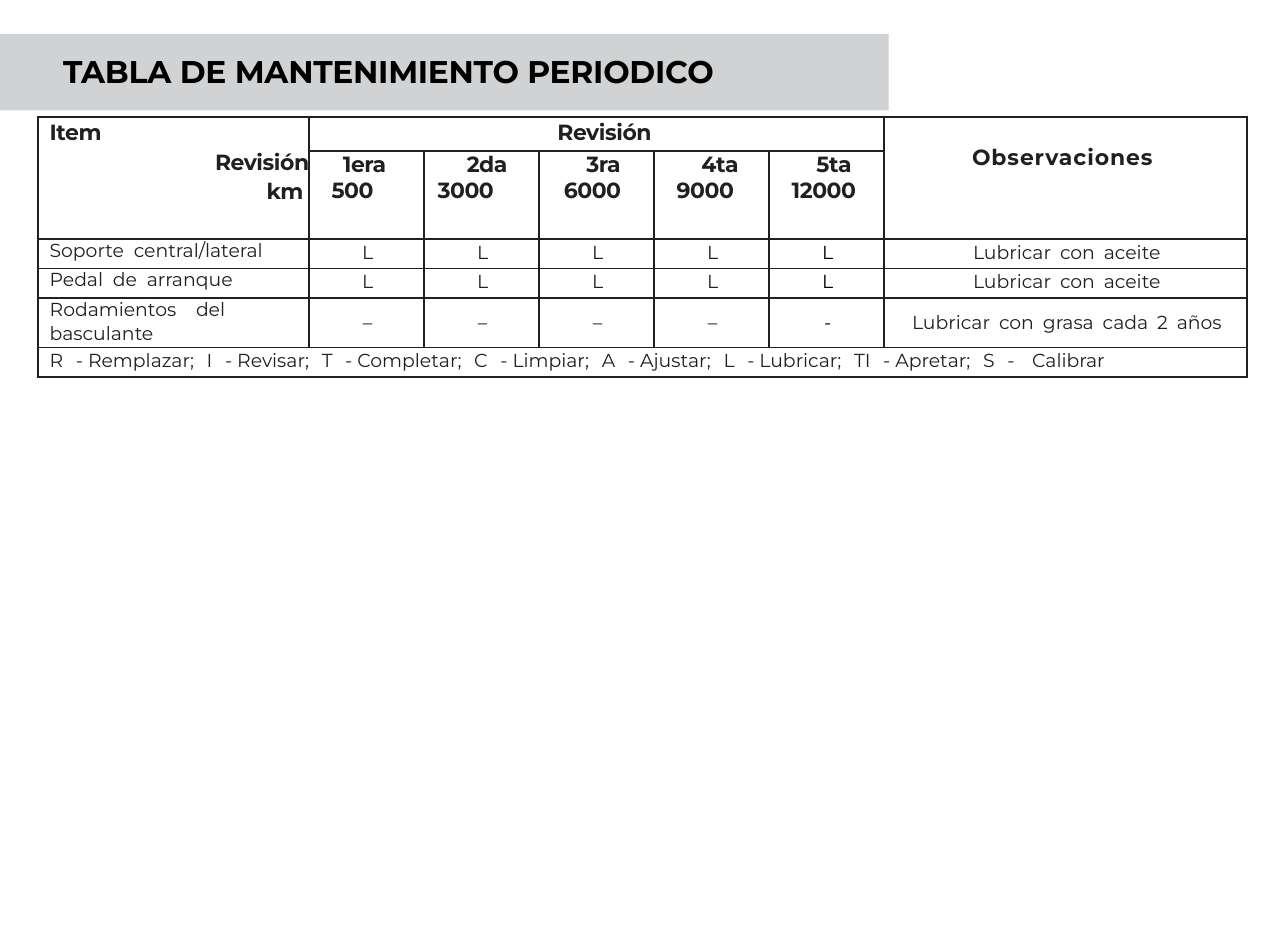
from lxml.etree import SubElement
from pptx import Presentation
from pptx.dml.color import RGBColor
from pptx.enum.shapes import MSO_SHAPE as Shape
from pptx.enum.text import MSO_ANCHOR as Anchor, MSO_AUTO_SIZE as AutoSize, PP_ALIGN as Align
from pptx.oxml.ns import qn
from pptx.util import Inches, Pt

COLORS = {"ink": "221F1F", "black": "000000", "band": "D1D2D3"}
COLUMNS = [1.2] + [0.51] * 5 + [1.61]
ROWS = [0.15, 0.38, 0.13, 0.13, 0.22, 0.13]
VERTICAL_RULES = [0.75, 0.75, 0.5, 0.5, 0.5, 0.75, 0.75, 0.75]
HORIZONTAL_RULES = [0.75, 0.75, 0.75, 0.5, 0.5, 0.5, 0.5]
REVISIONS = [
    ("1era", 0.15, "500", 0.1),
    ("2da", 0.19, "3000", 0.06),
    ("3ra", 0.21, "6000", 0.11),
    ("4ta", 0.21, "9000", 0.1),
    ("5ta", 0.21, "12000", 0.1),
]
TASKS = [
    (["Soporte central/lateral"], "LLLLL", "Lubricar con aceite", 0.01),
    (["Pedal de arranque"], "LLLLL", "Lubricar con aceite", 0.01),
    (["Rodamientos  del", "basculante"], "––––-", "Lubricar con grasa cada 2 años", 0.06),
]
LEGEND = ("R - Remplazar; I - Revisar; T - Completar; C - Limpiar; A - Ajustar; "
          "L - Lubricar; TI - Apretar; S -  Calibrar")


def write(frame, text, size=6, bold=False, color="ink", align=Align.LEFT,
          indent=0, before=0, line=None, tracking=0, gap=0, first=True):
    paragraph = frame.paragraphs[0] if first else frame.add_paragraph()
    paragraph.alignment = align
    paragraph.space_before = Pt(before)
    paragraph.line_spacing = Pt(line) if line else 1.0
    properties = paragraph._p.get_or_add_pPr()
    properties.set("marL", str(Inches(indent)))
    properties.set("indent", "0")
    pieces = [(text, tracking)]
    if gap:
        words = text.split(" ")
        pieces = [(words[0], tracking)]
        for previous, word in zip(words, words[1:]):
            pieces += [(" ", 0 if previous == "-" else gap), (word, tracking)]
    for piece, spacing in pieces:
        if not piece:
            continue
        run = paragraph.add_run()
        run.text = piece
        run.font.name = "Montserrat"
        run.font.size = Pt(size)
        run.font.bold = bold
        run.font.color.rgb = RGBColor.from_string(COLORS[color])
        run._r.get_or_add_rPr().set("spc", str(round(spacing * 100)))


class MaintenanceSlide:
    def __init__(self, deck):
        self.slide = deck.slides.add_slide(deck.slide_layouts[5])

    def title(self, text, left, top, width, height):
        heading = self.slide.shapes.title
        heading.left, heading.top = Inches(left), Inches(top)
        heading.width, heading.height = Inches(width), Inches(height)
        frame = heading.text_frame
        frame.margin_left = frame.margin_right = frame.margin_bottom = 0
        frame.margin_top = Inches(0.01)
        frame.word_wrap = True
        frame.auto_size = AutoSize.NONE
        frame.vertical_anchor = Anchor.TOP
        write(frame, text, size=10, bold=True, color="black", indent=0.01, tracking=-0.05)

    def band(self, left, top, width, height):
        strip = self.slide.shapes.add_shape(
            Shape.RECTANGLE, Inches(left), Inches(top), Inches(width), Inches(height))
        strip.shadow.inherit = False
        strip.fill.solid()
        strip.fill.fore_color.rgb = RGBColor.from_string(COLORS["band"])
        strip.line.fill.background()
        self.slide.shapes.title.element.addprevious(strip.element)

    def table(self, left, top):
        grid = self.slide.shapes.add_table(
            len(ROWS), len(COLUMNS), Inches(left), Inches(top),
            Inches(sum(COLUMNS)), Inches(sum(ROWS))).table
        grid.first_row = grid.horz_banding = False
        for column, width in zip(grid.columns, COLUMNS):
            column.width = Inches(width)
        for row, height in zip(grid.rows, ROWS):
            row.height = Inches(height)
        for start, end in [((0, 0), (1, 0)), ((0, 1), (0, 5)),
                           ((0, 6), (1, 6)), ((5, 0), (5, 6))]:
            grid.cell(*start).merge(grid.cell(*end))
        for r in range(len(ROWS)):
            for c in range(len(COLUMNS)):
                cell = grid.cell(r, c)
                cell.margin_left = cell.margin_right = cell.margin_top = cell.margin_bottom = 0
                if not cell.is_spanned:
                    self.borders(cell, r, c)
                cell.fill.background()
        return grid

    def borders(self, cell, r, c):
        widths = {
            "L": VERTICAL_RULES[c],
            "R": VERTICAL_RULES[c + cell.span_width],
            "T": HORIZONTAL_RULES[r],
            "B": HORIZONTAL_RULES[r + cell.span_height],
        }
        for side, width in widths.items():
            line = SubElement(cell._tc.get_or_add_tcPr(), qn(f"a:ln{side}"), w=str(Pt(width)))
            SubElement(SubElement(line, qn("a:solidFill")), qn("a:srgbClr"), val=COLORS["ink"])

    def text(self, cell, text, top=0, **style):
        cell.margin_top = Inches(top)
        write(cell.text_frame, text, **style)


def main():
    deck = Presentation()
    deck.slide_width, deck.slide_height = Inches(5.71), Inches(4.14)
    page = MaintenanceSlide(deck)
    page.title("TABLA DE MANTENIMIENTO PERIODICO", 0.27, 0.22, 3.54, 0.18)
    page.band(0, 0.15, 3.94, 0.34)
    schedule = page.table(0.17, 0.52)

    header = {"size": 7, "bold": True, "tracking": -0.1}
    corner = schedule.cell(0, 0)
    page.text(corner, "Item", top=0.01, indent=0.05, **header)
    for label in ("Revisión", "km "):
        write(corner.text_frame, label, align=Align.RIGHT, before=0.9, first=False, **header)
    page.text(schedule.cell(0, 1), "Revisión", top=0.01, indent=0.07, align=Align.CENTER, **header)
    page.text(schedule.cell(0, 6), "Observaciones", top=0.12, indent=0.39,
              **{**header, "tracking": 0.3})
    for c, (ordinal, ordinal_indent, km, km_indent) in enumerate(REVISIONS, 1):
        cell = schedule.cell(1, c)
        page.text(cell, ordinal, indent=ordinal_indent, **header)
        write(cell.text_frame, km, indent=km_indent, first=False, **header)

    for r, (item, marks, remark, top) in enumerate(TASKS, 2):
        cell = schedule.cell(r, 0)
        page.text(cell, item[0], indent=0.05, gap=1.6)
        for extra in item[1:]:
            write(cell.text_frame, extra, indent=0.05, before=0.9, line=6.9, first=False)
        for c, mark in enumerate(marks, 1):
            page.text(schedule.cell(r, c), mark, top=top, indent=0.01, align=Align.CENTER,
                      color="black" if c == len(marks) else "ink")
        page.text(schedule.cell(r, 6), remark, top=top, indent=0.01, align=Align.CENTER, gap=1.3)
    page.text(schedule.cell(5, 0), LEGEND, top=0.01, indent=0.05, gap=2.5)
    deck.save("out.pptx")


if __name__ == "__main__":
    main()
